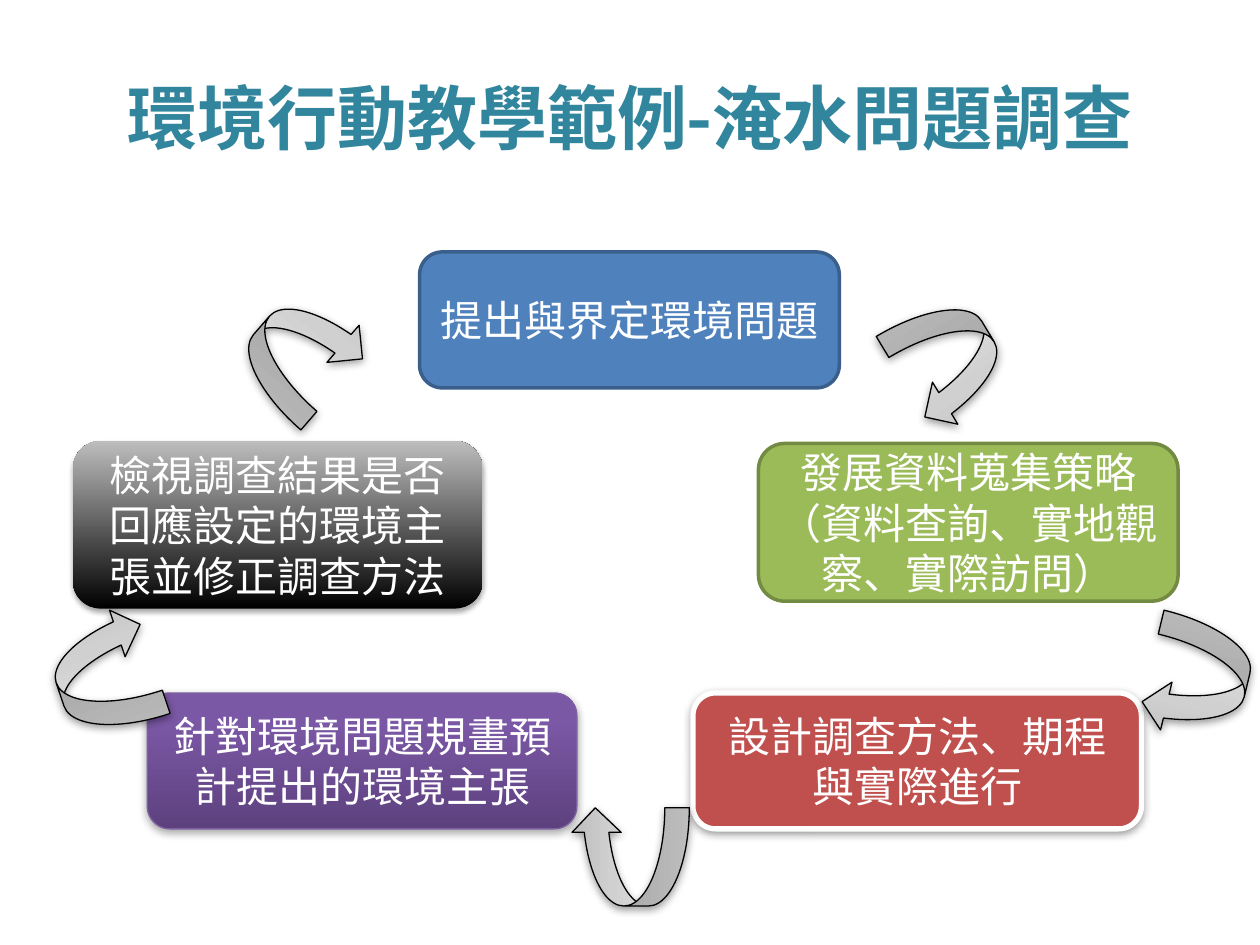
import pptx
import pptx.dml.color
import pptx.enum.shapes
import pptx.enum.text
import pptx.oxml
import pptx.oxml.ns
import pptx.util
from lxml import etree

Cm = pptx.util.Cm
SHAPE = pptx.enum.shapes.MSO_SHAPE
COLORS = {
    "title": "31859C", "white": "FFFFFF", "black": "000000",
    "blue": "4F81BD", "blue edge": "3A5F8C",
    "green": "9BBB59", "green edge": "738A42",
    "red": "C0504D", "purple edge": "7D60A0",
    "purple dark": "5D417E", "purple mid": "7B58A6", "purple light": "7B57A8",
    "silver": "BDBDBD",
    "arrow dark": "BCBCBC", "arrow mid": "D0D0D0", "arrow light": "EDEDED",
}
# Gradients run from bottom to top: (percent, colour name)
BLACK_FADE = [(0, "black"), (100, "silver")]
PURPLE_FADE = [(0, "purple dark"), (80, "purple mid"), (100, "purple light")]
ARROW_FADE = [(0, "arrow dark"), (35, "arrow mid"), (100, "arrow light")]


def rgb(name):
    return pptx.dml.color.RGBColor.from_string(COLORS[name])


def add_xml(parent, tag, **attributes):
    return etree.SubElement(parent, pptx.oxml.ns.qn(tag), attributes)


def write_text(frame, text, size=24, color="white", font="Calibri", east_asian=None, bold=False):
    frame.word_wrap = True
    frame.vertical_anchor = pptx.enum.text.MSO_ANCHOR.MIDDLE
    para = frame.paragraphs[0]
    para.alignment = pptx.enum.text.PP_ALIGN.CENTER
    span = para.add_run()
    span.text = text
    span.font.size = pptx.util.Pt(size)
    span.font.bold = bold
    span.font.name = font
    span.font.color.rgb = rgb(color)
    if east_asian:
        add_xml(span.font._element, "a:ea", typeface=east_asian)


class CyclePage:
    """Holds the slide and the look of its cycle of steps."""
    heading_font = "Noto Sans CJK SC"
    arrow_size = (1.98, 2.39)

    def __init__(self, deck):
        self.page = deck.slides.add_slide(deck.slide_layouts[5])

    def title(self, text, left, top, width, height):
        box = self.page.shapes.title
        box.left, box.top, box.width, box.height = map(Cm, (left, top, width, height))
        write_text(box.text_frame, text, size=40, color="title", bold=True,
                   font=self.heading_font, east_asian=self.heading_font)

    def shape(self, kind, place, fill, edge=None, edge_width=0, shadow=None):
        """Fill is a colour name or a list of stops; shadow is (opacity, blur, distance)."""
        box = self.page.shapes.add_shape(kind, *map(Cm, place))
        if isinstance(fill, str):
            box.fill.solid()
            box.fill.fore_color.rgb = rgb(fill)
        else:
            self.fade(box, fill)
        if edge:
            box.line.color.rgb = rgb(edge)
            box.line.width = pptx.util.Pt(edge_width)
        else:
            box.line.fill.background()
        box.shadow.inherit = False
        if shadow:
            self.drop_shadow(box, *shadow)
        return box

    def fade(self, box, stops):
        box.fill.gradient()
        box.fill.gradient_angle = 90
        stop_list = box._element.spPr.find(".//" + pptx.oxml.ns.qn("a:gsLst"))
        for old in list(stop_list):
            stop_list.remove(old)
        for percent, name in stops:
            stop = add_xml(stop_list, "a:gs", pos=str(percent * 1000))
            add_xml(stop, "a:srgbClr", val=COLORS[name])

    def drop_shadow(self, box, opacity, blur, distance):
        effects = box._element.spPr.find(pptx.oxml.ns.qn("a:effectLst"))
        outer = add_xml(effects, "a:outerShdw", blurRad=str(pptx.util.Pt(blur)),
                        dist=str(pptx.util.Pt(distance)), dir="5400000", rotWithShape="0")
        color = add_xml(outer, "a:srgbClr", val=COLORS["black"])
        add_xml(color, "a:alpha", val=str(opacity * 1000))

    def step(self, text, place, fill, **look):
        box = self.shape(SHAPE.ROUNDED_RECTANGLE, place, fill, **look)
        write_text(box.text_frame, text)

    def arrow(self, left, top, rotation):
        arrow = self.shape(SHAPE.CURVED_LEFT_ARROW, (left, top, *self.arrow_size), ARROW_FADE,
                           edge="black", edge_width=0.75, shadow=(38, 5, 1.6))
        arrow.rotation = rotation


def main():
    deck = pptx.Presentation()
    deck.slide_width, deck.slide_height = Cm(25.4), Cm(19.05)
    cycle = CyclePage(deck)
    cycle.title("環境行動教學範例-淹水問題調查", 1.27, 0.76, 22.86, 3.18)

    cycle.step("提出與界定環境問題", (8.46, 5.08, 8.46, 2.74), "blue",
               edge="blue edge", edge_width=2)
    cycle.step("檢視調查結果是否回應設定的環境主張並修正調查方法",
               (1.47, 8.89, 8.26, 3.38), BLACK_FADE, shadow=(35, 3.1, 1.8))
    cycle.step("設計調查方法、期程與實際進行", (13.97, 13.97, 9.04, 2.74), "red",
               edge="white", edge_width=3, shadow=(38, 5, 1.6))
    cycle.step("針對環境問題規畫預計提出的環境主張", (2.97, 13.97, 8.66, 2.74), PURPLE_FADE,
               edge="purple edge", edge_width=0.75, shadow=(35, 5, 1.8))
    cycle.step("發展資料蒐集策略（資料查詢、實地觀察、實際訪問）",
               (15.29, 8.94, 8.46, 3.18), "green", edge="green edge", edge_width=2)

    for left, top, rotation in [(18.14, 6.1, 328.9), (23.16, 12.5, 13.5), (11.71, 16.08, 90),
                                (1.12, 12.37, 161.4), (5.11, 5.92, 220.9)]:
        cycle.arrow(left, top, rotation)
    deck.save("out.pptx")


if __name__ == "__main__":
    main()
